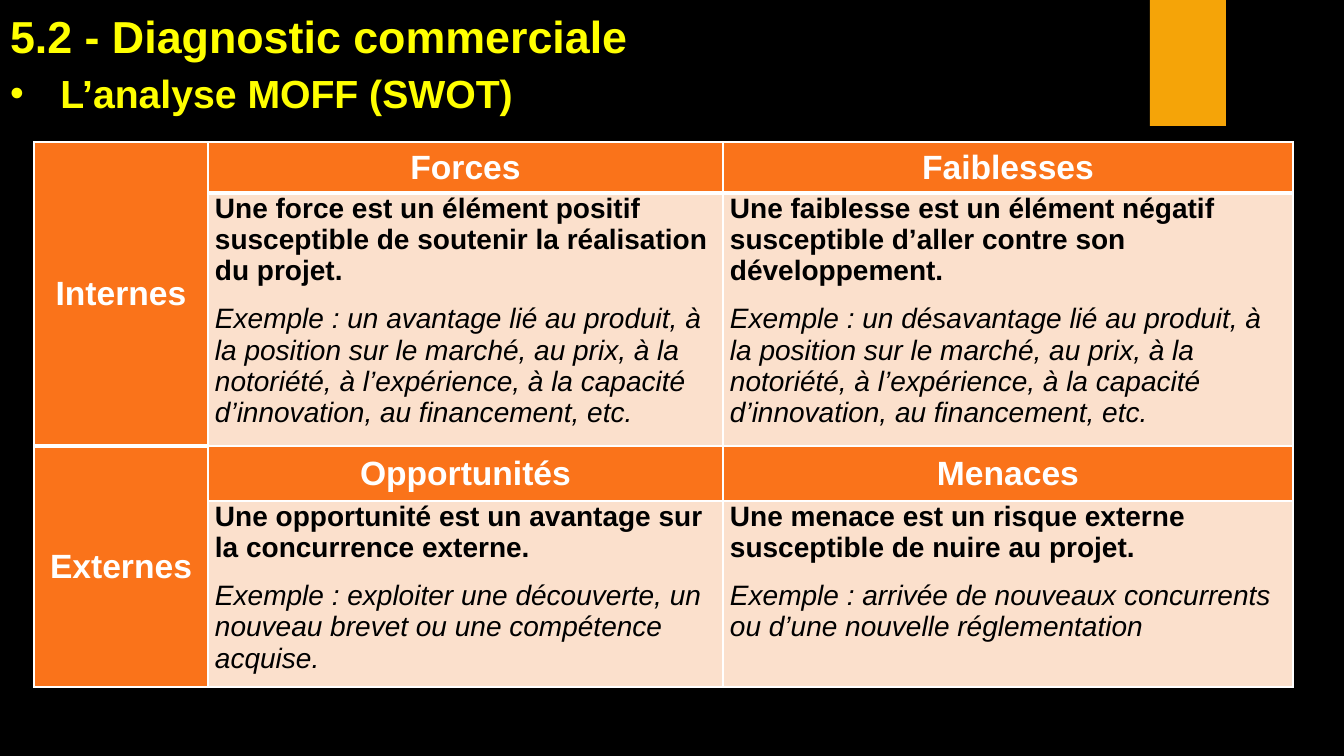
"""Build the slide presenting the SWOT analysis as a two-by-two table."""
from lxml.etree import SubElement
from pptx import Presentation
from pptx.dml.color import RGBColor
from pptx.enum.shapes import MSO_SHAPE
from pptx.enum.text import MSO_ANCHOR, MSO_AUTO_SIZE, PP_ALIGN
from pptx.oxml.ns import qn
from pptx.util import Pt

PX = 914400 / 100.8
COLORS = {
    "background": "000000", "heading": "FFFF00", "tab": "F5A408",
    "header": "FA731A", "body": "FBE0CC", "white": "FFFFFF", "black": "000000",
}
HEADING = "5.2 - Diagnostic commerciale"
SUBHEADING = "L’analyse MOFF (SWOT)"
SWOT = [
    ("Internes", [
        ("Forces",
         "Une force est un élément positif susceptible de soutenir la réalisation du projet.",
         "Exemple : un avantage lié au produit, à la position sur le marché, au prix, "
         "à la notoriété, à l’expérience, à la capacité d’innovation, au financement, etc."),
        ("Faiblesses",
         "Une faiblesse est un élément négatif susceptible d’aller contre son développement.",
         "Exemple : un désavantage lié au produit, à la position sur le marché, au prix, "
         "à la notoriété, à l’expérience, à la capacité d’innovation, au financement, etc."),
    ]),
    ("Externes", [
        ("Opportunités",
         "Une opportunité est un avantage sur la concurrence externe.",
         "Exemple : exploiter une découverte, un nouveau brevet ou une compétence acquise."),
        ("Menaces",
         "Une menace est un risque externe susceptible de nuire au projet.",
         "Exemple : arrivée de nouveaux concurrents ou d’une nouvelle réglementation"),
    ]),
]
TABLE_LEFT, TABLE_TOP = 34, 142
COLUMN_WIDTHS = [174, 515, 570]
ROW_HEIGHTS = [51, 253, 55, 186]
HEADING_FORMAT = {"size": 32, "bold": True, "color": "heading"}
SUBHEADING_FORMAT = {**HEADING_FORMAT, "size": 28}
HEADER_FORMAT = {"size": 24, "bold": True, "color": "white"}
DEFINITION_FORMAT = {"size": 20, "bold": True, "color": "black"}
EXAMPLE_FORMAT = {"size": 20, "bold": False, "italic": True, "color": "black"}


def px(length):
    return round(length * PX)


def rgb(name):
    return RGBColor.from_string(COLORS[name])


def set_font(paragraph, values):
    paragraph.font.name = "Arial"
    paragraph.font.color.rgb = rgb(values["color"])
    for name, value in values.items():
        if name == "size":
            paragraph.font.size = Pt(value)
        elif name != "color":
            setattr(paragraph.font, name, value)


def fill_placeholder(placeholder, top, text, values, bulleted=False):
    box = {"left": 0, "top": top, "width": 1300, "height": 60}
    for name, value in box.items():
        setattr(placeholder, name, px(value))
    frame = placeholder.text_frame
    frame.text = text
    options = {"margin_left": px(10), "margin_top": px(9), "margin_bottom": 0,
               "word_wrap": True, "auto_size": MSO_AUTO_SIZE.NONE,
               "vertical_anchor": MSO_ANCHOR.TOP}
    for name, value in options.items():
        setattr(frame, name, value)
    paragraph = frame.paragraphs[0]
    paragraph.alignment = PP_ALIGN.LEFT
    paragraph.space_before = Pt(0)
    if bulleted:
        properties = paragraph._p.get_or_add_pPr()
        properties.set("marL", "457200")
        properties.set("indent", "-457200")
        SubElement(properties, qn("a:buFont")).set("typeface", "Arial")
        SubElement(properties, qn("a:buChar")).set("char", "•")
    set_font(paragraph, values)


def format_cell(cell, fill, bottom_width=1):
    properties = cell._tc.get_or_add_tcPr()
    for side in "LRTB":
        width = bottom_width if side == "B" else 1
        line = SubElement(properties, qn(f"a:ln{side}"), w=str(Pt(width)))
        color = SubElement(SubElement(line, qn("a:solidFill")), qn("a:srgbClr"))
        color.set("val", COLORS["white"])
    cell.fill.solid()
    cell.fill.fore_color.rgb = rgb(fill)
    margins = {"left": px(7), "right": px(7), "top": 0, "bottom": 0}
    for side, value in margins.items():
        setattr(cell, f"margin_{side}", value)


def write_header(cell, text):
    cell.text = text
    cell.vertical_anchor = MSO_ANCHOR.MIDDLE
    paragraph = cell.text_frame.paragraphs[0]
    paragraph.alignment = PP_ALIGN.CENTER
    set_font(paragraph, HEADER_FORMAT)


def write_body(cell, definition, example):
    cell.text = f"{definition}\n{example}"
    cell.vertical_anchor = MSO_ANCHOR.TOP
    first, second = cell.text_frame.paragraphs
    first.space_after = second.space_before = second.space_after = Pt(6)
    set_font(first, DEFINITION_FORMAT)
    set_font(second, EXAMPLE_FORMAT)


def add_swot_table(slide):
    table = slide.shapes.add_table(
        len(ROW_HEIGHTS), len(COLUMN_WIDTHS), px(TABLE_LEFT), px(TABLE_TOP),
        px(sum(COLUMN_WIDTHS)), px(sum(ROW_HEIGHTS))).table
    for column, width in zip(table.columns, COLUMN_WIDTHS):
        column.width = px(width)
    for row, height in zip(table.rows, ROW_HEIGHTS):
        row.height = px(height)
    for index, (origin, quadrants) in enumerate(SWOT):
        top = 2 * index
        thick = 3 if index == 0 else 1
        side = table.cell(top, 0)
        side.merge(table.cell(top + 1, 0))
        for row in (top, top + 1):
            format_cell(table.cell(row, 0), "header", thick)
        write_header(side, origin)
        for column, (title, definition, example) in enumerate(quadrants, 1):
            header, body = table.cell(top, column), table.cell(top + 1, column)
            format_cell(header, "header", thick)
            write_header(header, title)
            format_cell(body, "body")
            write_body(body, definition, example)


def main():
    presentation = Presentation()
    presentation.slide_width, presentation.slide_height = px(1344), px(756)
    slide = presentation.slides.add_slide(presentation.slide_layouts[1])
    slide.background.fill.solid()
    slide.background.fill.fore_color.rgb = rgb("background")
    tab = slide.shapes.add_shape(MSO_SHAPE.RECTANGLE, px(1150), 0, px(76), px(126))
    tab.shadow.inherit = False
    tab.fill.solid()
    tab.fill.fore_color.rgb = rgb("tab")
    tab.line.fill.background()
    fill_placeholder(slide.shapes.title, 0, HEADING, HEADING_FORMAT)
    fill_placeholder(slide.placeholders[1], 60, SUBHEADING, SUBHEADING_FORMAT, bulleted=True)
    add_swot_table(slide)
    presentation.save("out.pptx")


if __name__ == "__main__":
    main()
